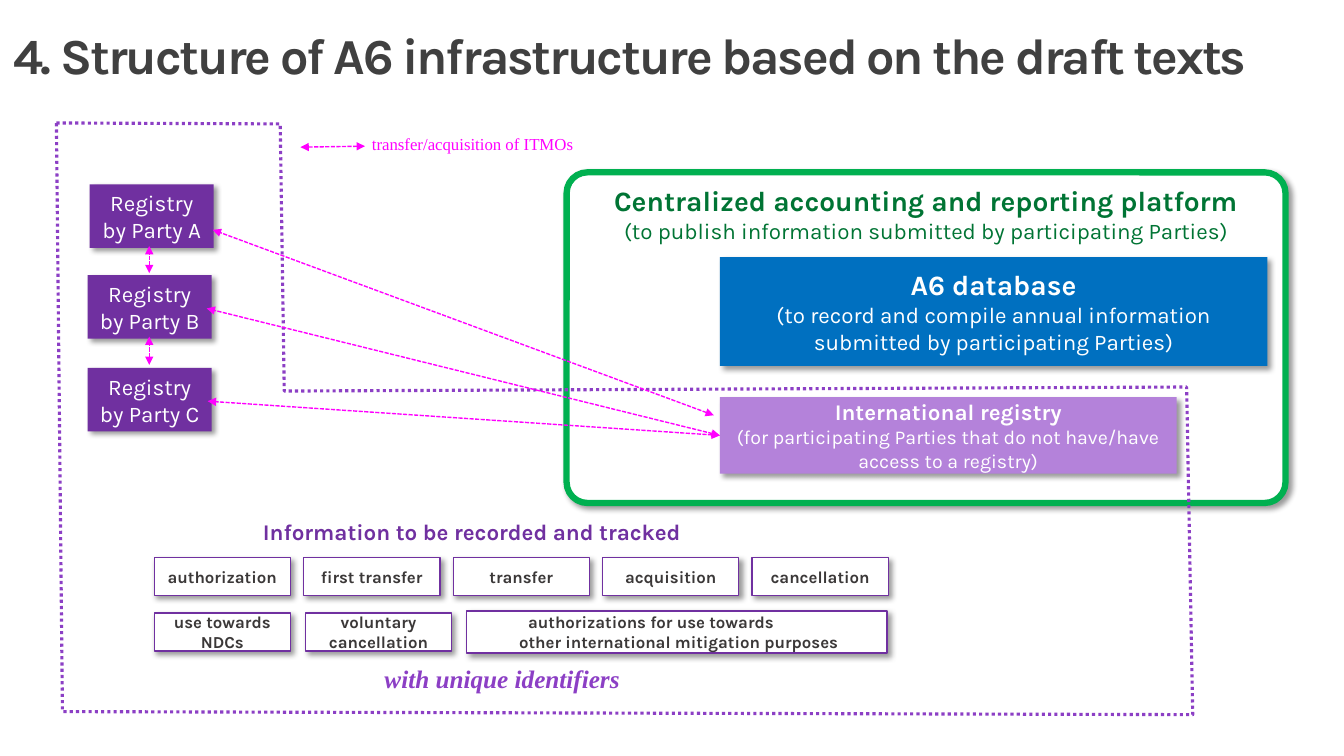
from dataclasses import dataclass
from typing import Optional

from lxml.etree import SubElement
from pptx import Presentation
from pptx.dml.color import RGBColor
from pptx.enum.dml import MSO_LINE
from pptx.enum.shapes import MSO_CONNECTOR, MSO_SHAPE
from pptx.enum.text import MSO_ANCHOR, MSO_AUTO_SIZE, PP_ALIGN
from pptx.oxml.ns import qn
from pptx.util import Inches, Pt

WHITE = RGBColor(0xFF, 0xFF, 0xFF)
BLACK = RGBColor(0x00, 0x00, 0x00)
TITLE_GRAY = RGBColor(0x40, 0x40, 0x40)
DARK_GRAY = RGBColor(0x3B, 0x38, 0x38)
GREEN = RGBColor(0x00, 0xB0, 0x50)
DARK_GREEN = RGBColor(0x00, 0x74, 0x34)
BLUE = RGBColor(0x00, 0x70, 0xC0)
PURPLE = RGBColor(0x70, 0x30, 0xA0)
LIGHT_PURPLE = RGBColor(0xB4, 0x82, 0xDA)
OUTLINE_PURPLE = RGBColor(0x8C, 0x3F, 0xC5)
MAGENTA = RGBColor(0xFF, 0x00, 0xFF)
KARLA = "Karla"
TIMES = "Times New Roman"


@dataclass
class TextLine:
    text: str
    size: int
    color: RGBColor
    bold: bool = False
    italic: bool = False
    font: str = KARLA
    align: PP_ALIGN = PP_ALIGN.CENTER
    indent: float = 0


@dataclass
class Box:
    left: float
    top: float
    width: float
    height: float
    lines: list[TextLine]
    fill: RGBColor = WHITE
    line: Optional[RGBColor] = None
    line_width: float = 1
    preset: MSO_SHAPE = MSO_SHAPE.RECTANGLE
    anchor: MSO_ANCHOR = MSO_ANCHOR.MIDDLE


@dataclass
class Arrow:
    start: tuple[float, float]
    end: tuple[float, float]
    from_registry: bool = False


def write_lines(text_frame, lines: list[TextLine]) -> None:
    text_frame.word_wrap = True
    text_frame.text = "\n".join(line.text for line in lines)
    for paragraph, line in zip(text_frame.paragraphs, lines):
        paragraph.alignment = line.align
        if line.indent:
            paragraph._p.get_or_add_pPr().set("marL", str(Inches(line.indent)))
        font = paragraph.runs[0].font
        font.name, font.size = line.font, Pt(line.size)
        font.bold, font.italic = line.bold, line.italic
        font.color.rgb = line.color


def add_shadow(shape) -> None:
    """Give the shape a soft shadow towards the lower right."""
    shape.shadow.inherit = False
    effects = shape._element.spPr.find(qn("a:effectLst"))
    shadow = SubElement(effects, qn("a:outerShdw"), blurRad=str(Pt(4)),
                        dist=str(Pt(3)), dir="2700000", algn="tl", rotWithShape="0")
    color = SubElement(shadow, qn("a:srgbClr"), val=str(BLACK))
    SubElement(color, qn("a:alpha"), val="40000")


def add_box(slide, box: Box):
    shape = slide.shapes.add_shape(box.preset, Inches(box.left), Inches(box.top),
                                   Inches(box.width), Inches(box.height))
    if box.preset == MSO_SHAPE.ROUNDED_RECTANGLE:
        shape.adjustments[0] = 0.063
    shape.fill.solid()
    shape.fill.fore_color.rgb = box.fill
    if box.line is None:
        shape.line.fill.background()
    else:
        shape.line.color.rgb = box.line
        shape.line.width = Pt(box.line_width)
    add_shadow(shape)
    shape.text_frame.vertical_anchor = box.anchor
    write_lines(shape.text_frame, box.lines)
    return shape


def add_label(slide, left: float, top: float, width: float, height: float,
              line: TextLine) -> None:
    label = slide.shapes.add_textbox(Inches(left), Inches(top), Inches(width), Inches(height))
    write_lines(label.text_frame, [line])
    label.text_frame.auto_size = MSO_AUTO_SIZE.SHAPE_TO_FIT_TEXT


def add_arrow(slide, arrow: Arrow, registry) -> None:
    """Draw a dashed double-headed arrow, joined to the registry where it starts there."""
    points = [Inches(value) for value in (*arrow.start, *arrow.end)]
    connector = slide.shapes.add_connector(MSO_CONNECTOR.STRAIGHT, *points)
    if arrow.from_registry:
        connector.begin_connect(registry, 1)
    connector.line.color.rgb = MAGENTA
    connector.line.width = Pt(1)
    connector.line.dash_style = MSO_LINE.SQUARE_DOT
    line_element = connector.line._get_or_add_ln()
    for end in ("a:headEnd", "a:tailEnd"):
        SubElement(line_element, qn(end), type="triangle")
    SubElement(connector._element.spPr, qn("a:effectLst"))


def add_tracking_outline(slide, points: list[tuple[float, float]]) -> None:
    start, *others = [(Inches(x), Inches(y)) for x, y in points]
    builder = slide.shapes.build_freeform(*start)
    builder.add_line_segments(others, close=True)
    outline = builder.convert_to_shape()
    outline.fill.background()
    outline.line.color.rgb = OUTLINE_PURPLE
    outline.line.width = Pt(2.25)
    outline.line.dash_style = MSO_LINE.ROUND_DOT
    outline.shadow.inherit = False


def record_box(left: float, top: float, width: float, height: float,
               lines: list[TextLine]) -> Box:
    return Box(left, top, width, height, lines, line=PURPLE)


def record_text(text: str) -> TextLine:
    return TextLine(text, 12, DARK_GRAY, bold=True)


def main() -> None:
    presentation = Presentation()
    presentation.slide_width, presentation.slide_height = Inches(13.33), Inches(7.5)
    slide = presentation.slides.add_slide(presentation.slide_layouts[5])

    title = slide.shapes.title
    title.left, title.top = Inches(0.03), Inches(0.19)
    title.width, title.height = Inches(13.28), Inches(0.71)
    title.text_frame.vertical_anchor = MSO_ANCHOR.TOP
    write_lines(title.text_frame, [
        TextLine("4. Structure of A6 infrastructure based on the draft texts", 36,
                 TITLE_GRAY, bold=True, align=PP_ALIGN.LEFT)])
    title.text_frame.paragraphs[0].runs[0]._r.get_or_add_rPr().set("spc", "-150")

    add_box(slide, Box(5.62, 1.71, 7.13, 3.28, [
        TextLine("Centralized accounting and reporting platform", 20, DARK_GREEN, bold=True),
        TextLine("(to publish information submitted by participating Parties)", 16, DARK_GREEN),
    ], line=GREEN, line_width=4.5, preset=MSO_SHAPE.ROUNDED_RECTANGLE, anchor=MSO_ANCHOR.TOP))
    add_box(slide, Box(7.14, 2.55, 5.43, 1.08, [
        TextLine("A6 database", 20, WHITE, bold=True),
        TextLine("(to record and compile annual information submitted by participating Parties)",
                 16, WHITE),
    ], fill=BLUE))
    for party, left, top in (("A", 0.89, 1.83), ("B", 0.87, 2.73), ("C", 0.87, 3.65)):
        add_box(slide, Box(left, top, 1.23, 0.63,
                           [TextLine(f"Registry by Party {party}", 16, WHITE)], fill=PURPLE))
    registry = add_box(slide, Box(7.14, 3.94, 4.53, 0.76, [
        TextLine("International registry", 16, WHITE, bold=True),
        TextLine("(for participating Parties that do not have/have access to a registry)",
                 14, WHITE),
    ], fill=LIGHT_PURPLE))

    add_label(slide, 2.51, 5.09, 5.1, 0.37,
              TextLine("Information to be recorded and tracked", 16, PURPLE, bold=True,
                       align=PP_ALIGN.LEFT))
    records = ("authorization", "first transfer", "transfer", "acquisition", "cancellation")
    for column, record in enumerate(records):
        add_box(slide, record_box(1.53 + 1.4825 * column, 5.53, 1.35, 0.38,
                                  [record_text(record)]))
    add_box(slide, record_box(1.53, 6.08, 1.35, 0.38, [record_text("use towards NDCs")]))
    other_purposes = [record_text("authorizations for use towards"),
                      record_text("other international mitigation purposes")]
    for line, indent in zip(other_purposes, (0.51, 0.42)):
        line.align, line.indent = PP_ALIGN.LEFT, indent
    add_box(slide, record_box(4.63, 6.06, 4.17, 0.42, other_purposes))
    add_box(slide, record_box(3.03, 6.08, 1.45, 0.38, [record_text("voluntary cancellation")]))

    add_tracking_outline(slide, [(0.56, 1.22), (2.78, 1.23), (2.82, 3.88),
                                 (11.77, 3.84), (11.83, 7.09), (0.62, 7.06)])
    for arrow in (
        Arrow((1.48, 2.71), (1.48, 2.44)),
        Arrow((1.48, 3.62), (1.48, 3.34)),
        Arrow((7.08, 4.12), (2.11, 2.28)),
        Arrow((7.14, 4.32), (2.05, 3.06), from_registry=True),
        Arrow((7.14, 4.32), (2.06, 3.98), from_registry=True),
        Arrow((3.62, 1.45), (2.98, 1.46)),
    ):
        add_arrow(slide, arrow, registry)
    add_label(slide, 3.59, 1.28, 2.72, 0.3,
              TextLine("transfer/acquisition of ITMOs", 12, MAGENTA, font=TIMES,
                       align=PP_ALIGN.LEFT))
    add_label(slide, 2.64, 6.53, 4.68, 0.4,
              TextLine("with unique identifiers", 18, OUTLINE_PURPLE, bold=True,
                       italic=True, font=TIMES))
    presentation.save("out.pptx")


if __name__ == "__main__":
    main()
